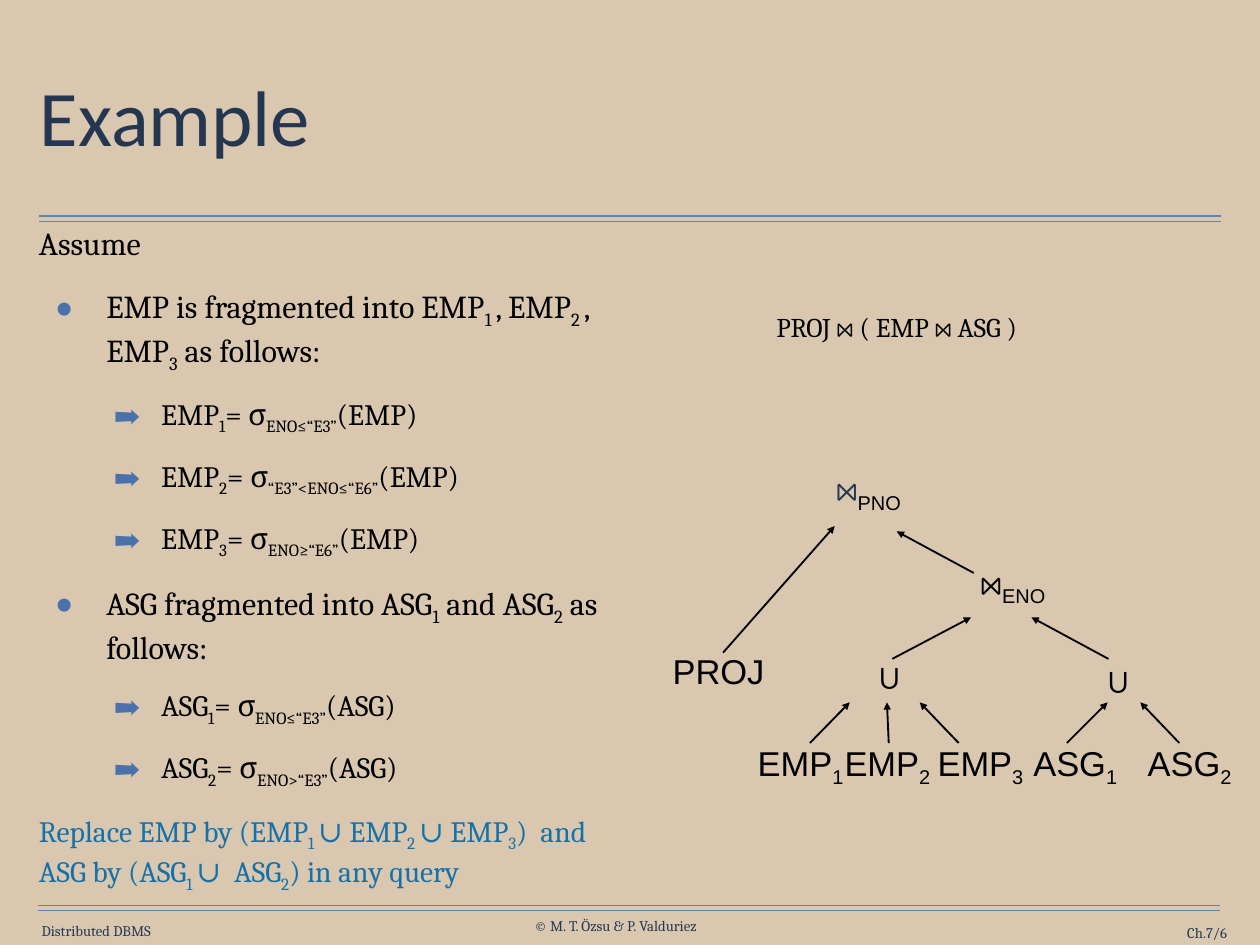
"""Builds a lecture slide on fragmented relations and their query tree."""
from dataclasses import dataclass

from lxml import etree
from pptx import Presentation
from pptx.dml import color
from pptx.enum import shapes, text
from pptx.oxml import ns
from pptx.util import Inches, Pt


@dataclass(frozen=True)
class Theme:
    """Colours, fonts and type sizes of the slide."""
    paper: str = "D9C8AF"
    navy: str = "263750"
    title_ink: str = "253750"
    rule: str = "6682AA"
    bullet: str = "4A71A9"
    accent: str = "1771A9"
    ink: str = "000000"
    title_face: str = "Calibri"
    serif: str = "Cambria"
    sans: str = "Arial"
    title_size: int = 64
    topic_size: int = 26
    detail_size: int = 24
    query_size: int = 22
    node_size: int = 28
    footer_size: int = 12


THEME = Theme()
LEFT, CENTER, RIGHT = text.PP_ALIGN.LEFT, text.PP_ALIGN.CENTER, text.PP_ALIGN.RIGHT

ASSUMPTIONS = [
    ("lead", "Assume"),
    ("topic", "EMP is fragmented into EMP|1 |, EMP|2 |, EMP|3| as follows:"),
    ("detail", "EMP|1|= σ|ENO≤“E3”|(EMP)"),
    ("detail", "EMP|2|= σ|“E3”<ENO≤“E6”|(EMP)"),
    ("detail", "EMP|3|= σ|ENO≥“E6”|(EMP)"),
    ("topic", "ASG fragmented into ASG|1| and ASG|2| as follows:"),
    ("detail", "ASG|1|= σ|ENO≤“E3”|(ASG)"),
    ("detail", "ASG|2|= σ|ENO>“E3”|(ASG)"),
    ("closing", "Replace EMP by (EMP|1 |∪ EMP|2 |∪ EMP|3|)  and ASG by "
                "(ASG|1 |∪  ASG|2|) in any query"),
]

# role: size, colour, left margin, indent, line spacing, space after, bullet, bullet percent
ROLES = {
    "lead": (THEME.topic_size, THEME.ink, 0.4, -0.4, Pt(34.1), 8.5, None, 0),
    "topic": (THEME.topic_size, THEME.ink, 0.76, -0.57, None, 7.1, "•", 150),
    "detail": (THEME.detail_size, THEME.ink, 1.38, -0.53, Pt(31.3), 7.1, "➡", 85),
    "closing": (THEME.detail_size, THEME.accent, 0, 0, None, 0, None, 0),
}

LEAVES = [("EMP|1", 8.53), ("EMP|2", 9.51), ("EMP|3", 10.56),
          ("ASG|1", 11.63), ("ASG|2", 12.92)]
UNIONS = [(9.89, 7.43), (12.47, 7.47)]
JOINS = [("PNO", 9.3, 5.37, THEME.navy), ("ENO", 10.93, 6.43, THEME.ink)]
LEAF_ARROWS = [(9.14, 9.59), (10.03, 10.01), (10.82, 10.38),
               (12.04, 12.5), (13.31, 12.87)]
UPPER_ARROWS = [((8.16, 7.37), (9.42, 5.94)), ((10.99, 6.47), (10.12, 6)),
                ((10.07, 7.44), (10.96, 6.97)), ((12.51, 7.44), (11.64, 6.97))]


def style_font(font, face, size, ink):
    """Set the face, size and colour of a font."""
    font.name = face
    font.size = Pt(size)
    font.color.rgb = color.RGBColor.from_string(ink)


def write_runs(paragraph, marked):
    """Write text whose parts between bars are subscripts."""
    for index, part in enumerate(marked.split("|")):
        run = paragraph.add_run()
        run.text = part
        if index % 2:
            run._r.get_or_add_rPr().set("baseline", "-25000")


def set_bullet(paragraph, margin, indent, mark, percent):
    """Give a paragraph its indents and its bullet, or none."""
    props = paragraph._p.get_or_add_pPr()
    props.set("marL", str(Inches(margin)))
    props.set("indent", str(Inches(indent)))
    if mark is None:
        etree.SubElement(props, ns.qn("a:buNone"))
        return
    tint = etree.SubElement(props, ns.qn("a:buClr"))
    etree.SubElement(tint, ns.qn("a:srgbClr")).set("val", THEME.bullet)
    etree.SubElement(props, ns.qn("a:buSzPct")).set("val", str(percent * 1000))
    etree.SubElement(props, ns.qn("a:buChar")).set("char", mark)


def place(placeholder, left, top, width, height, anchor):
    """Move a placeholder and prepare its frame."""
    placeholder.left, placeholder.top = Inches(left), Inches(top)
    placeholder.width, placeholder.height = Inches(width), Inches(height)
    frame = placeholder.text_frame
    frame.auto_size = text.MSO_AUTO_SIZE.NONE
    frame.vertical_anchor = anchor
    frame.margin_left = frame.margin_right = Inches(0.06)
    frame.margin_top = frame.margin_bottom = Inches(0.06)
    return frame


def fill_title(title):
    """Write the slide title."""
    frame = place(title, 0.39, 0.49, 13.44, 1.76, text.MSO_ANCHOR.MIDDLE)
    heading = frame.paragraphs[0]
    heading.text = "Example"
    heading.alignment = LEFT
    heading.line_spacing = 0.9
    style_font(heading.font, THEME.title_face, THEME.title_size, THEME.title_ink)


def fill_assumptions(body):
    """Write the list of fragments."""
    frame = place(body, 0.38, 2.42, 6.58, 7.6, text.MSO_ANCHOR.TOP)
    for index, (role, marked) in enumerate(ASSUMPTIONS):
        size, ink, margin, indent, spacing, after, mark, percent = ROLES[role]
        item = frame.add_paragraph() if index else frame.paragraphs[0]
        item.level = 1 if role == "detail" else 0
        write_runs(item, marked)
        set_bullet(item, margin, indent, mark, percent)
        item.line_spacing = spacing
        item.space_before = Pt(12 if index else 0)
        item.space_after = Pt(after)
        style_font(item.font, THEME.serif, size, ink)


def add_label(slide, marked, box, face, size, ink, align=CENTER, spacing=None, wrap=False):
    """Add one line of text without insets and return its paragraph."""
    frame = slide.shapes.add_textbox(*map(Inches, box)).text_frame
    frame.word_wrap = wrap
    frame.margin_left = frame.margin_right = frame.margin_top = frame.margin_bottom = 0
    label = frame.paragraphs[0]
    write_runs(label, marked)
    label.alignment = align
    label.line_spacing = spacing
    style_font(label.font, face, size, ink)
    return label


def add_line(slide, start, end, ink, width, arrow=False):
    """Draw a straight line, with an arrowhead at its end if asked."""
    line = slide.shapes.add_connector(
        shapes.MSO_CONNECTOR.STRAIGHT, *map(Inches, (*start, *end)))
    line.line.color.rgb = color.RGBColor.from_string(ink)
    line.line.width = Pt(width)
    if arrow:
        etree.SubElement(line.line._get_or_add_ln(), ns.qn("a:tailEnd")).set("type", "triangle")
    etree.SubElement(line._element.spPr, ns.qn("a:effectLst"))


def add_frame(slide):
    """Draw the double rules and the footer."""
    for left, top in ((0.44, 2.44), (0.43, 10.22)):
        for y in (top, top + 0.06):
            add_line(slide, (left, y), (left + 13.34, y), THEME.rule, 1)
    for words, box, align in (
            ("Distributed DBMS", (0.47, 10.41, 1.38, 0.2), LEFT),
            ("© M. T. Özsu & P. Valduriez", (6.03, 10.35, 2.08, 0.2), LEFT),
            ("Ch.7/6", (12.31, 10.43, 1.54, 0.2), RIGHT)):
        add_label(slide, words, box, THEME.serif, THEME.footer_size, THEME.navy, align, wrap=True)


def add_query_tree(slide):
    """Draw the operator tree and the query above it."""
    for start, end in UPPER_ARROWS:
        add_line(slide, start, end, THEME.ink, 1.5, arrow=True)
    for leaf_x, union_x in LEAF_ARROWS:
        add_line(slide, (leaf_x, 8.39), (union_x, 7.93), THEME.ink, 1.5, arrow=True)
    node = (THEME.sans, THEME.node_size, THEME.ink)
    add_label(slide, "PROJ", (7.58, 7.43, 1.06, 0.4), *node, spacing=Pt(27))
    for relation, left in LEAVES:
        add_label(slide, relation, (left, 8.53, 1.01, 0.4), *node, spacing=Pt(27))
    for left, top in UNIONS:
        add_label(slide, "∪", (left, top, 0.3, 0.44), *node, spacing=Pt(31.3))
    for attribute, left, top, ink in JOINS:
        join = add_label(slide, f"⋈|{attribute}", (left, top, 1, 0.44), *node, spacing=Pt(31.3))
        symbol, subscript = join.runs
        style_font(symbol.font, THEME.serif, THEME.node_size, ink)
        style_font(subscript.font, *node)
    add_label(slide, "PROJ ⋈ ( EMP ⋈ ASG )", (7.27, 3.51, 5.7, 0.37),
              THEME.serif, THEME.query_size, THEME.ink, wrap=True)


def main():
    """Build and save the slide."""
    deck = Presentation()
    deck.slide_width, deck.slide_height = Inches(14.22), Inches(10.67)
    slide = deck.slides.add_slide(deck.slide_layouts[1])
    slide.background.fill.solid()
    slide.background.fill.fore_color.rgb = color.RGBColor.from_string(THEME.paper)
    add_frame(slide)
    fill_title(slide.shapes.title)
    fill_assumptions(slide.placeholders[1])
    add_query_tree(slide)
    deck.save("out.pptx")


if __name__ == "__main__":
    main()
